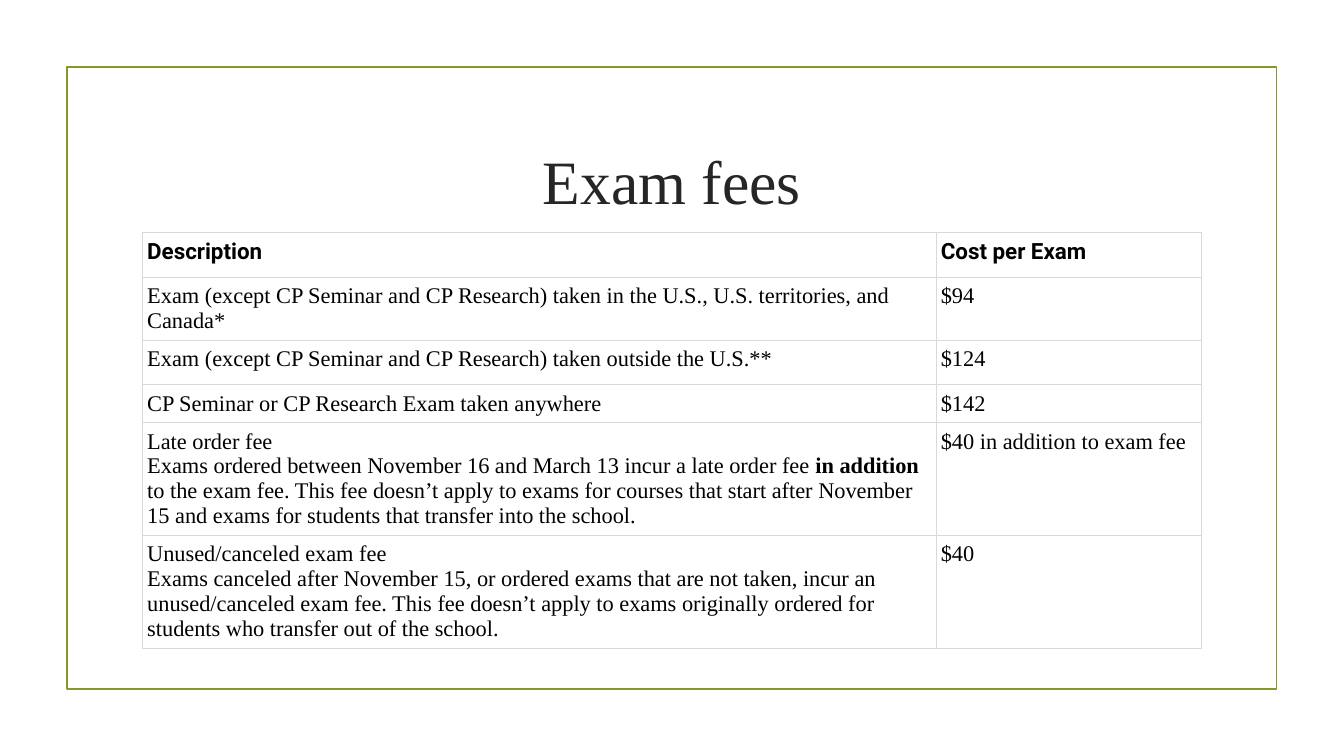
"""Build the exam fees slide with its framed fee table."""
from lxml import etree
from pptx import Presentation
from pptx.dml.color import RGBColor
from pptx.enum.shapes import MSO_SHAPE
from pptx.enum.text import MSO_ANCHOR, PP_ALIGN
from pptx.oxml.ns import qn
from pptx.util import Cm, Pt

RECTANGLE = MSO_SHAPE.RECTANGLE
MIDDLE = MSO_ANCHOR.MIDDLE
CENTER = PP_ALIGN.CENTER
GREEN = RGBColor(0x83, 0x99, 0x2A)
CHARCOAL = RGBColor(0x26, 0x26, 0x26)
BLACK = RGBColor(0, 0, 0)
WHITE = RGBColor(0xFF, 0xFF, 0xFF)
GRID = RGBColor(0xD9, 0xD9, 0xD9)
SERIF = "Times New Roman"
SANS = "Roboto"
BOLD_MARK = "|"

FEES = [
    ("Description", "Cost per Exam"),
    ("Exam (except CP Seminar and CP Research) taken in the U.S., "
     "U.S. territories, and Canada*", "$94"),
    ("Exam (except CP Seminar and CP Research) taken outside the U.S.**", "$124"),
    ("CP Seminar or CP Research Exam taken anywhere", "$142"),
    ("Late order fee\nExams ordered between November 16 and March 13 incur a late "
     "order fee |in addition| to the exam fee. This fee doesn’t apply to exams for "
     "courses that start after November 15 and exams for students that transfer "
     "into the school.", "$40 in addition to exam fee"),
    ("Unused/canceled exam fee\nExams canceled after November 15, or ordered exams "
     "that are not taken, incur an unused/canceled exam fee. This fee doesn’t apply "
     "to exams originally ordered for students who transfer out of the school.",
     "$40"),
]
COLUMN_WIDTHS = (20, 6.67)
ROW_HEIGHTS = (1.12, 1.12, 1.12, 0.74, 2.74, 2.34)


class FeeSlide:
    """Hold the slide and draw its elements in one style."""

    def __init__(self, presentation):
        self.slide = presentation.slides.add_slide(presentation.slide_layouts[5])

    def style(self, paragraph, size, color, name=SERIF, bold=None):
        font = paragraph.font
        font.name, font.size, font.bold = name, Pt(size), bold
        font.color.rgb = color

    def frame(self, left, top, width, height):
        border = self.slide.shapes.add_shape(
            RECTANGLE, Cm(left), Cm(top), Cm(width), Cm(height))
        border.shadow.inherit = False
        border.fill.background()
        border.line.color.rgb = GREEN
        border.line.width = Pt(1.25)

    def title(self, text, left, top, width, height):
        heading = self.slide.shapes.title
        heading.left, heading.top = Cm(left), Cm(top)
        heading.width, heading.height = Cm(width), Cm(height)
        heading.text_frame.text = text
        heading.text_frame.vertical_anchor = MIDDLE
        paragraph = heading.text_frame.paragraphs[0]
        paragraph.alignment = CENTER
        self.style(paragraph, 44, CHARCOAL)

    def table(self, rows, left, top, width, height):
        holder = self.slide.shapes.add_table(
            len(rows), len(rows[0]), Cm(left), Cm(top), Cm(width), Cm(height))
        fees = holder.table
        fees.first_row = fees.horz_banding = False
        for column, column_width in zip(fees.columns, COLUMN_WIDTHS):
            column.width = Cm(column_width)
        for row, row_height in zip(fees.rows, ROW_HEIGHTS):
            row.height = Cm(row_height)
        holder.height = Cm(height)
        for row_index, texts in enumerate(rows):
            for column_index, text in enumerate(texts):
                self.cell(fees.cell(row_index, column_index), text, row_index == 0)

    def cell(self, cell, text, is_header):
        cell.margin_left = cell.margin_right = Cm(0.11)
        cell.margin_top, cell.margin_bottom = Cm(0.16), Cm(0.17)
        self.borders(cell)
        cell.fill.solid()
        cell.fill.fore_color.rgb = WHITE
        paragraph = cell.text_frame.paragraphs[0]
        self.style(paragraph, 16, BLACK, SANS if is_header else SERIF,
                   True if is_header else None)
        for line_index, line in enumerate(text.split("\n")):
            if line_index:
                paragraph.add_line_break()
            for part_index, part in enumerate(line.split(BOLD_MARK)):
                run = paragraph.add_run()
                run.text = part
                if part_index % 2:
                    run.font.bold = True

    def borders(self, cell):
        properties = cell._tc.get_or_add_tcPr()
        for side in ("a:lnL", "a:lnR", "a:lnT", "a:lnB"):
            edge = etree.SubElement(properties, qn(side), w=str(Pt(0.75)))
            fill = etree.SubElement(edge, qn("a:solidFill"))
            etree.SubElement(fill, qn("a:srgbClr"), val=str(GRID))


def main():
    presentation = Presentation()
    presentation.slide_width, presentation.slide_height = Cm(33.87), Cm(19.05)
    page = FeeSlide(presentation)
    page.frame(1.69, 1.69, 30.48, 15.67)
    page.title("Exam fees", 3.6, 2.72, 26.67, 3.63)
    page.table(FEES, 3.6, 5.87, 26.67, 11)
    presentation.save("out.pptx")


if __name__ == "__main__":
    main()
